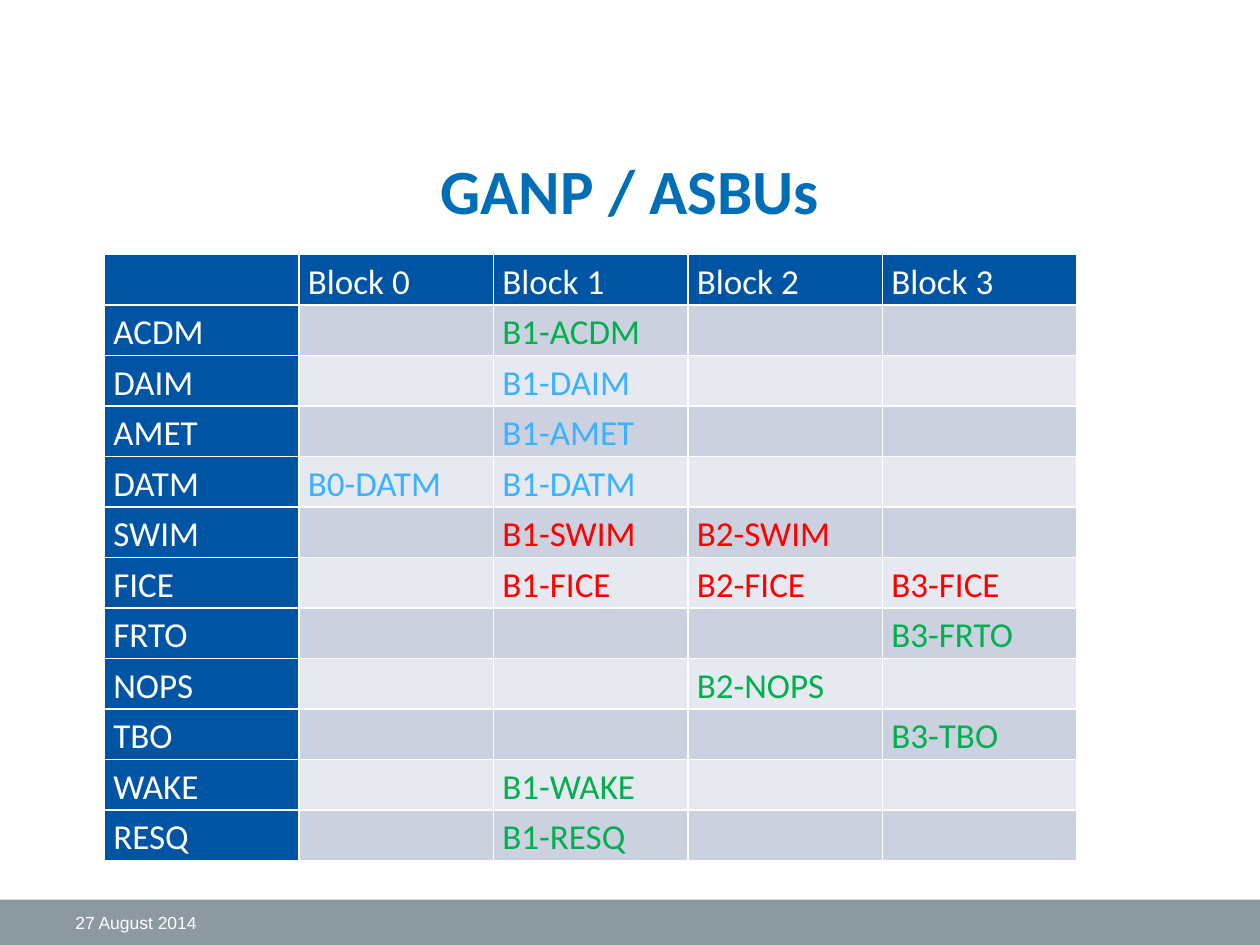
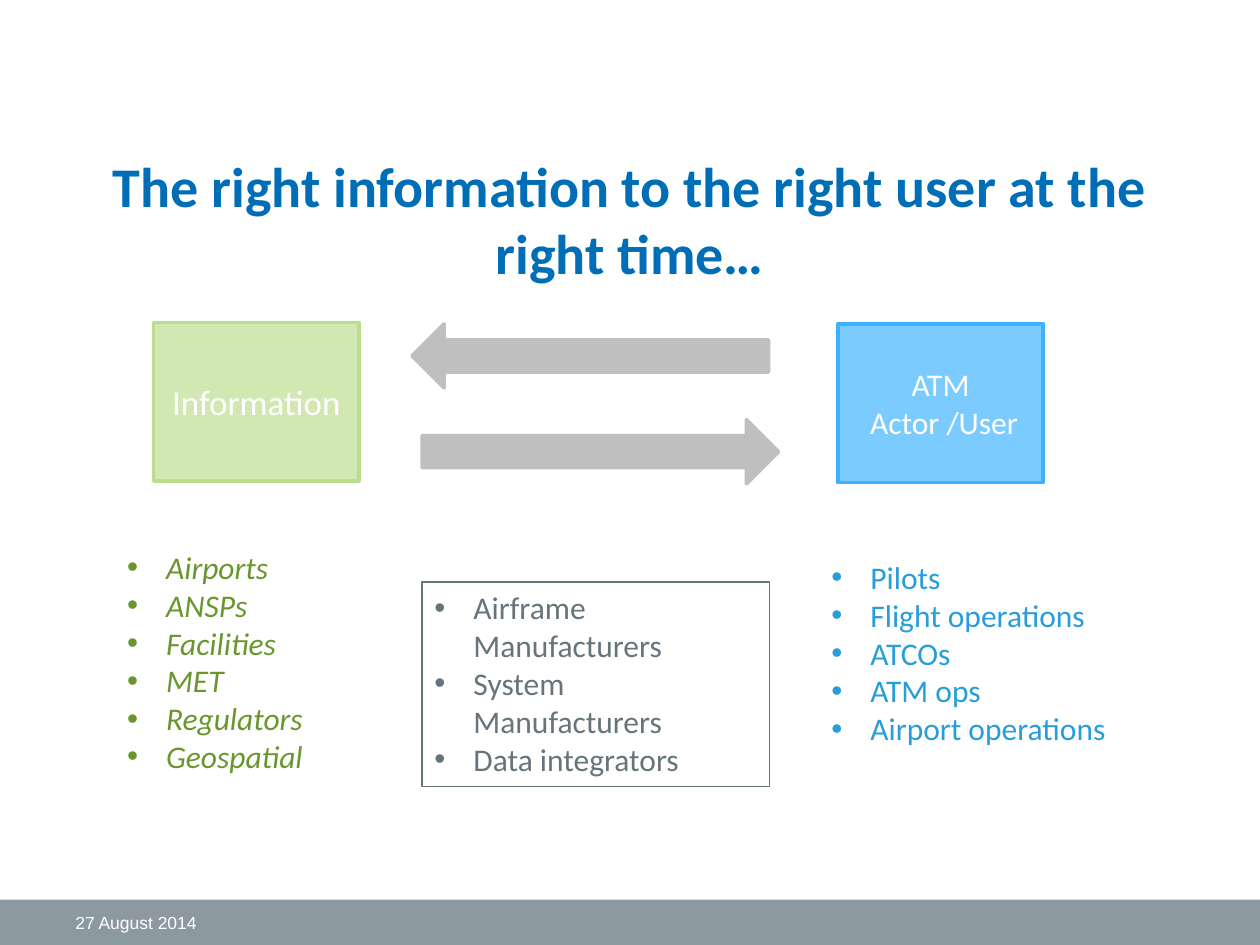
from dataclasses import dataclass
from typing import NamedTuple, Optional

from lxml import etree
from pptx import Presentation
from pptx.dml.color import RGBColor
from pptx.enum.shapes import MSO_SHAPE
from pptx.enum.text import MSO_ANCHOR, MSO_AUTO_SIZE, PP_ALIGN
from pptx.oxml.ns import qn
from pptx.util import Inches, Pt

RECTANGLE = MSO_SHAPE.RECTANGLE
LEFT_ARROW = MSO_SHAPE.LEFT_ARROW
RIGHT_ARROW = MSO_SHAPE.RIGHT_ARROW
TOP, MIDDLE = MSO_ANCHOR.TOP, MSO_ANCHOR.MIDDLE
LEFT, CENTER = PP_ALIGN.LEFT, PP_ALIGN.CENTER
NO_AUTOSIZE = MSO_AUTO_SIZE.NONE
TITLE_ONLY = 5


def color(code: str) -> RGBColor:
    return RGBColor.from_string(code)


@dataclass(frozen=True)
class Theme:
    """Fonts, type sizes and colours of the deck."""
    font: str = "Calibri"
    footer_font: str = "Arial"
    title_size: float = 36
    long_title_size: float = 32
    large_size: float = 20
    body_size: float = 18
    footer_size: float = 10
    white: RGBColor = color("FFFFFF")
    title: RGBColor = color("006EB7")
    band: RGBColor = color("8C99A1")
    header: RGBColor = color("0054A4")
    odd_row: RGBColor = color("CCD1E0")
    even_row: RGBColor = color("E7E9F0")
    green: RGBColor = color("00B050")
    blue: RGBColor = color("3BB1FF")
    red: RGBColor = color("FF0000")
    arrow: RGBColor = color("BFBFBF")
    source_fill: RGBColor = color("D1E8B2")
    source_line: RGBColor = color("BBDD8C")
    source_text: RGBColor = color("6A972D")
    user_fill: RGBColor = color("7CCBFF")
    user_text: RGBColor = color("279DD9")
    maker: RGBColor = color("66747C")


THEME = Theme()


class Frame(NamedTuple):
    """Left, top, width and height in inches."""
    left: float
    top: float
    width: float
    height: float

    def lengths(self) -> tuple:
        return tuple(Inches(value) for value in self)


class TextStyle(NamedTuple):
    size: float
    color: RGBColor
    font: str = THEME.font
    bold: bool = False
    italic: bool = False
    align: PP_ALIGN = LEFT
    bullet: bool = False
    spacing: Optional[float] = None


class Block(NamedTuple):
    """A filled shape, with or without text."""
    kind: MSO_SHAPE
    frame: Frame
    fill: RGBColor
    line: Optional[RGBColor] = None
    lines: tuple = ()
    size: float = THEME.body_size


class BulletList(NamedTuple):
    frame: Frame
    color: RGBColor
    items: tuple
    italic: bool = False
    outlined: bool = False


class Module(NamedTuple):
    """A table row: the thread's name, its text colour and its block numbers."""
    name: str
    color: RGBColor
    blocks: tuple


# Content
FOOTER_DATE = "27 August 2014"
BAND = Frame(0, 7.14, 10, 0.36)
DATE_FRAME = Frame(0.5, 7.14, 2.33, 0.36)
TABLE_FRAME = Frame(0.83, 2.02, 7.72, 4.81)
BLOCK_COUNT = 4

MODULES = (
    Module("ACDM", THEME.green, (1,)),
    Module("DAIM", THEME.blue, (1,)),
    Module("AMET", THEME.blue, (1,)),
    Module("DATM", THEME.blue, (0, 1)),
    Module("SWIM", THEME.red, (1, 2)),
    Module("FICE", THEME.red, (1, 2, 3)),
    Module("FRTO", THEME.green, (3,)),
    Module("NOPS", THEME.green, (2,)),
    Module("TBO", THEME.green, (3,)),
    Module("WAKE", THEME.green, (1,)),
    Module("RESQ", THEME.green, (1,)),
)

BLOCKS = (
    Block(LEFT_ARROW, Frame(3.27, 2.57, 2.83, 0.51), THEME.arrow, THEME.arrow),
    Block(RECTANGLE, Frame(1.22, 2.56, 1.63, 1.26), THEME.source_fill,
          THEME.source_line, ("Information",), THEME.large_size),
    Block(RECTANGLE, Frame(6.65, 2.57, 1.63, 1.26), THEME.user_fill,
          THEME.blue, ("ATM", " Actor /User")),
    Block(RIGHT_ARROW, Frame(3.35, 3.33, 2.83, 0.51), THEME.arrow, THEME.arrow),
)

LISTS = (
    BulletList(Frame(6.5, 4.38, 2.6, 1.92), THEME.user_text,
               ("Pilots", "Flight operations", "ATCOs", "ATM ops",
                "Airport operations")),
    BulletList(Frame(0.91, 4.3, 2.28, 2.22), THEME.source_text,
               ("Airports", "ANSPs", "Facilities", "MET", "Regulators",
                "Geospatial"), italic=True),
    BulletList(Frame(3.35, 4.62, 2.76, 1.62), THEME.maker,
               ("Airframe Manufacturers", "System Manufacturers",
                "Data integrators"), outlined=True),
)


# Text
def add_bullet(para) -> None:
    properties = para._p.get_or_add_pPr()
    properties.set("marL", str(Inches(0.31)))
    properties.set("indent", str(-Inches(0.31)))
    etree.SubElement(properties, qn("a:buFont")).set("typeface", "Arial")
    etree.SubElement(properties, qn("a:buChar")).set("char", "•")


def write_lines(text_frame, lines: tuple, style: TextStyle, anchor=TOP) -> None:
    frame_format = {"word_wrap": True, "auto_size": NO_AUTOSIZE,
                    "vertical_anchor": anchor}
    for name, value in frame_format.items():
        setattr(text_frame, name, value)
    write_paragraphs(text_frame, lines, style)


def write_paragraphs(text_frame, lines: tuple, style: TextStyle) -> None:
    font_format = {"name": style.font, "size": Pt(style.size),
                   "bold": style.bold, "italic": style.italic}
    for index, line in enumerate(lines):
        para = text_frame.add_paragraph() if index else text_frame.paragraphs[0]
        para.alignment = style.align
        if style.spacing:
            para.line_spacing = style.spacing
        if style.bullet:
            add_bullet(para)
        span = para.add_run()
        span.text = line
        for name, value in font_format.items():
            setattr(span.font, name, value)
        span.font.color.rgb = style.color


# Shapes
def draw_block(page, block: Block) -> None:
    shape = page.shapes.add_shape(block.kind, *block.frame.lengths())
    shape.shadow.inherit = False
    shape.fill.solid()
    shape.fill.fore_color.rgb = block.fill
    if block.line is None:
        shape.line.fill.background()
    else:
        shape.line.color.rgb = block.line
        shape.line.width = Pt(2)
    if block.lines:
        style = TextStyle(block.size, THEME.white, align=CENTER)
        write_lines(shape.text_frame, block.lines, style, MIDDLE)


def draw_list(page, bullets: BulletList) -> None:
    box = page.shapes.add_textbox(*bullets.frame.lengths())
    if bullets.outlined:
        box.line.color.rgb = bullets.color
        box.line.width = Pt(0.75)
    style = TextStyle(THEME.body_size, bullets.color, italic=bullets.italic,
                      bullet=True)
    write_lines(box.text_frame, bullets.items, style)


# Table
def set_borders(cell) -> None:
    properties = cell._tc.get_or_add_tcPr()
    for position, side in enumerate(("a:lnL", "a:lnR", "a:lnT", "a:lnB")):
        line = etree.Element(qn(side), w=str(Pt(1)))
        fill = etree.SubElement(line, qn("a:solidFill"))
        etree.SubElement(fill, qn("a:srgbClr")).set("val", str(THEME.white))
        properties.insert(position, line)


def fill_cell(cell, text: str, fill: RGBColor, text_color: RGBColor) -> None:
    cell_format = {"margin_left": Inches(0.07), "margin_right": Inches(0.07),
                   "margin_top": 0, "margin_bottom": 0}
    for name, value in cell_format.items():
        setattr(cell, name, value)
    cell.fill.solid()
    cell.fill.fore_color.rgb = fill
    set_borders(cell)
    if text:
        style = TextStyle(THEME.large_size, text_color, spacing=1.15)
        write_paragraphs(cell.text_frame, (text,), style)


def draw_module_table(page) -> None:
    row_count, column_count = len(MODULES) + 1, BLOCK_COUNT + 1
    table = page.shapes.add_table(row_count, column_count,
                                  *TABLE_FRAME.lengths()).table
    table.first_row = table.horz_banding = False
    for column in table.columns:
        column.width = Inches(TABLE_FRAME.width / column_count)
    for row in table.rows:
        row.height = Inches(TABLE_FRAME.height / row_count)

    fill_cell(table.cell(0, 0), "", THEME.header, THEME.white)
    for number in range(BLOCK_COUNT):
        fill_cell(table.cell(0, number + 1), f"Block {number}",
                  THEME.header, THEME.white)
    for index, module in enumerate(MODULES, start=1):
        fill_cell(table.cell(index, 0), module.name, THEME.header, THEME.white)
        row_fill = THEME.odd_row if index % 2 else THEME.even_row
        for number in range(BLOCK_COUNT):
            text = f"B{number}-{module.name}" if number in module.blocks else ""
            fill_cell(table.cell(index, number + 1), text, row_fill, module.color)


# Pages
def add_page(deck, title: str, title_size: float, title_height: float):
    page = deck.slides.add_slide(deck.slide_layouts[TITLE_ONLY])
    draw_block(page, Block(RECTANGLE, BAND, THEME.band))
    heading = page.shapes.title
    heading_frame = Frame(0.5, 1.15, 9, title_height)
    for name, value in zip(("left", "top", "width", "height"),
                           heading_frame.lengths()):
        setattr(heading, name, value)
    write_lines(heading.text_frame, (title,),
                TextStyle(title_size, THEME.title, bold=True, align=CENTER))
    date_box = page.shapes.add_textbox(*DATE_FRAME.lengths())
    write_lines(date_box.text_frame, (FOOTER_DATE,),
                TextStyle(THEME.footer_size, THEME.white, THEME.footer_font),
                MIDDLE)
    return page


def main() -> None:
    deck = Presentation()
    deck.slide_width, deck.slide_height = Inches(10), Inches(7.5)

    # Upgrade modules by block
    page = add_page(deck, "GANP / ASBUs", THEME.title_size, 0.71)
    draw_module_table(page)

    # Information exchange
    page = add_page(deck,
                    "The right information to the right user at the right time…",
                    THEME.long_title_size, 1.26)
    for block in BLOCKS:
        draw_block(page, block)
    for bullets in LISTS:
        draw_list(page, bullets)

    deck.save("out.pptx")


if __name__ == "__main__":
    main()
